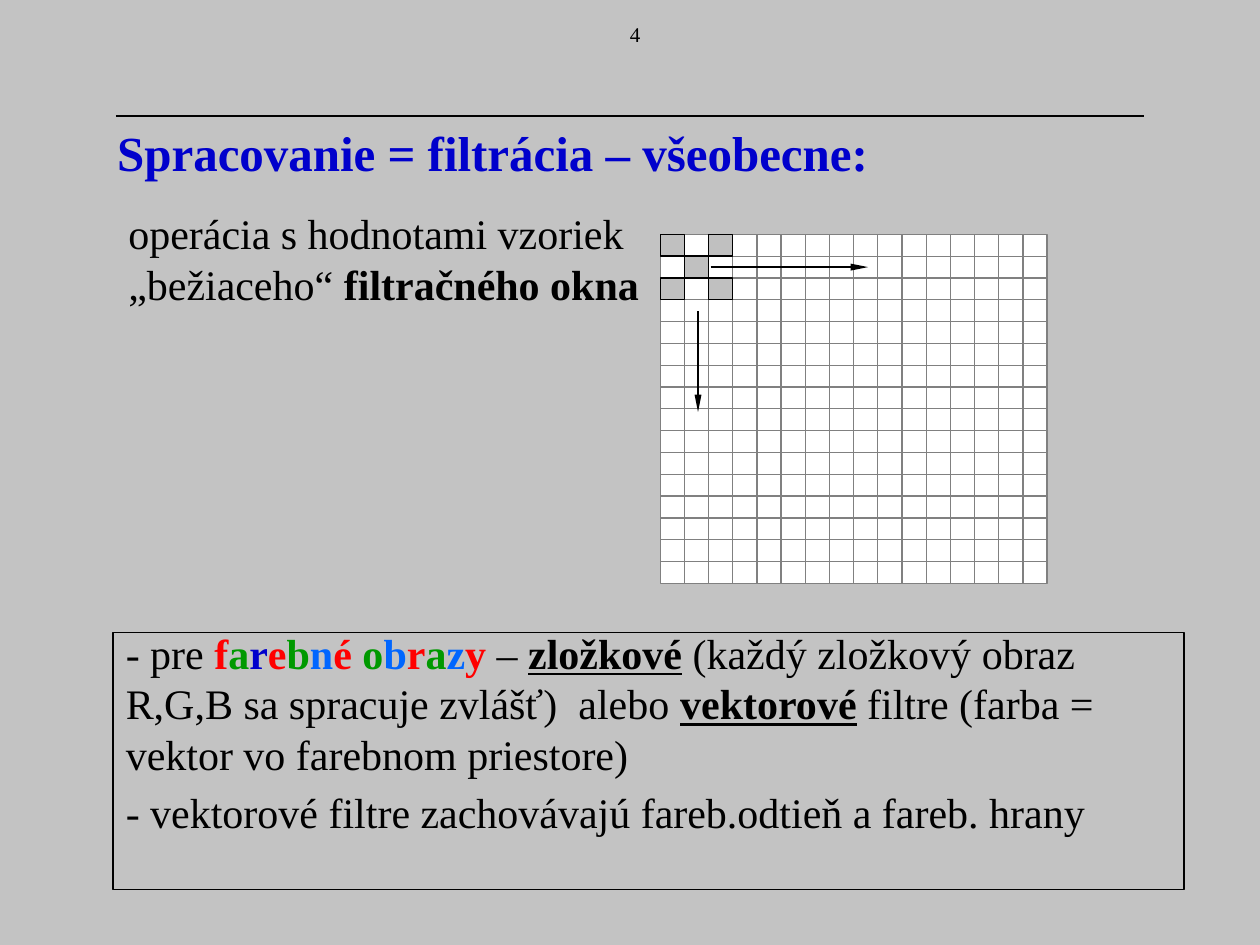
from dataclasses import dataclass

from lxml import etree
from pptx import Presentation
from pptx.dml.color import RGBColor
from pptx.enum.shapes import MSO_CONNECTOR, MSO_SHAPE
from pptx.enum.text import MSO_ANCHOR, MSO_AUTO_SIZE, PP_ALIGN
from pptx.oxml.ns import qn
from pptx.util import Inches, Pt

LINE = MSO_CONNECTOR.STRAIGHT
RECT = MSO_SHAPE.RECTANGLE
TOP, LEFT, BOTTOM, RIGHT = range(4)


@dataclass(frozen=True)
class Theme:
    font: str = "Times New Roman"
    head: int = 28
    body: int = 24
    small: int = 12
    black: str = "000000"
    white: str = "FFFFFF"
    grey: str = "808080"
    cell: str = "C0C0C0"
    back: str = "C3C3C3"
    navy: str = "0000CC"
    red: str = "FF0000"
    green: str = "009900"
    blue: str = "0066FF"


THEME = Theme()


def rgb(code):
    return RGBColor.from_string(code)


def inch(box):
    return [Inches(v) for v in box]


def paint(fill, code):
    fill.solid()
    fill.fore_color.rgb = rgb(code)


def set_text(shape, runs, size):
    """Write runs of (text, colour, bold, underline) as one paragraph."""
    frame = shape.text_frame
    frame.word_wrap = True
    frame.auto_size = MSO_AUTO_SIZE.NONE
    frame.vertical_anchor = MSO_ANCHOR.TOP
    para = frame.paragraphs[0]
    para.alignment = PP_ALIGN.LEFT
    for text, code, bold, under in runs:
        run = para.add_run()
        run.text = text
        font = run.font
        font.name, font.size = THEME.font, Pt(size)
        font.bold, font.underline = bold, under
        font.color.rgb = rgb(code)


def plain(text):
    return text, THEME.black, False, False


def strong(text, under=False):
    return text, THEME.black, True, under


def add_text(slide, box, runs, size=THEME.body):
    shape = slide.shapes.add_textbox(*inch(box))
    set_text(shape, runs, size)
    return shape


def add_line(shapes, start, end, code, width):
    line = shapes.add_connector(LINE, *inch(start + end))
    line.line.color.rgb = rgb(code)
    line.line.width = Pt(width)
    etree.SubElement(line.element.spPr, qn("a:effectLst"))
    return line


def add_arrow(shapes, start, end):
    arrow = add_line(shapes, start, end, THEME.black, 1.5)
    edge = arrow.element.spPr.find(qn("a:ln"))
    etree.SubElement(edge, qn("a:tailEnd"),
                     {"type": "triangle", "w": "sm", "len": "lg"})


def add_rect(shapes, box, fill, code, width):
    rect = shapes.add_shape(RECT, *inch(box))
    rect.shadow.inherit = False
    if fill:
        paint(rect.fill, fill)
    else:
        rect.fill.background()
    rect.line.color.rgb = rgb(code)
    rect.line.width = Pt(width)
    return rect


def add_head(slide, box):
    title = slide.shapes.title
    title.left, title.top, title.width, title.height = inch(box)
    runs = [("Spracovanie = filtrácia – všeobecne:", THEME.navy, True, False)]
    set_text(title, runs, THEME.head)
    top = box[1]
    add_line(slide.shapes, (0.92, top), (9.08, top), THEME.black, 1)


def add_grid(slide, box, count=16):
    """Draw a pixel grid with the filter window in its corner."""
    left, top, wide, high = box
    dx, dy = wide / count, high / count
    shapes = slide.shapes.add_group_shape().shapes
    frame = add_rect(shapes, box, THEME.white, THEME.grey, 0.75)
    for i in range(1, count):
        x, y = left + i * dx, top + i * dy
        col = add_line(shapes, (x, top), (x, top + high), THEME.grey, 0.75)
        row = add_line(shapes, (left, y), (left + wide, y), THEME.grey, 0.75)
        if 2 * i == count:
            col.begin_connect(frame, TOP)
            col.end_connect(frame, BOTTOM)
            row.begin_connect(frame, LEFT)
            row.end_connect(frame, RIGHT)
    for col, row in ((0, 0), (1, 1), (2, 0), (2, 2), (0, 2)):
        cell = (left + col * dx, top + row * dy, dx, dy)
        add_rect(shapes, cell, THEME.cell, THEME.black, 0.75)
    add_arrow(shapes, (left + 0.4, top + 0.26), (left + 1.65, top + 0.26))
    add_arrow(shapes, (left + 0.3, top + 0.61), (left + 0.3, top + 1.41))


def rainbow():
    red, green, navy, blue = THEME.red, THEME.green, THEME.navy, THEME.blue
    parts = ["f", "a", "r", "e", "b", "n", "é", " o", "b", "r", "a", "z", "y "]
    codes = [red, green, navy, red, green, blue, red,
             green, blue, red, green, blue, red]
    return [(text, code, True, False) for text, code in zip(parts, codes)]


def add_notes(slide, box):
    """Place the framed remarks on colour images."""
    left, top, wide, high = box
    runs = [
        plain("- pre "), *rainbow(), plain("– "),
        strong("zložkové", True), strong(" "),
        plain("(každý zložkový obraz R,G,B sa spracuje zvlášť)  alebo "),
        strong("vektorové", True), strong(" "),
        plain("filtre (farba = vektor vo farebnom priestore)"),
    ]
    add_text(slide, (left, top - 0.09, wide, 1.32), runs)
    last = "- vektorové filtre zachovávajú fareb.odtieň a fareb. hrany"
    add_text(slide, (left, top + 1.17, wide, 0.5), [plain(last)])
    add_rect(slide.shapes, box, None, THEME.black, 1)


def main():
    deck = Presentation()
    deck.slide_width, deck.slide_height = Inches(10), Inches(7.5)
    slide = deck.slides.add_slide(deck.slide_layouts[5])
    paint(slide.background.fill, THEME.back)
    add_head(slide, (0.83, 0.92, 6.45, 0.57))
    add_text(slide, (0.92, 1.6, 5.8, 0.9), [
        plain("operácia s hodnotami vzoriek „bežiaceho“ "),
        strong("filtračného okna"),
    ])
    page = add_text(slide, (5, 0.12, 0.5, 0.3), [plain("4")], THEME.small)
    page.text_frame.margin_left = 0
    add_grid(slide, (5.24, 1.86, 3.07, 2.77))
    add_notes(slide, (0.9, 5.02, 8.5, 2.04))
    deck.save("out.pptx")


if __name__ == "__main__":
    main()
